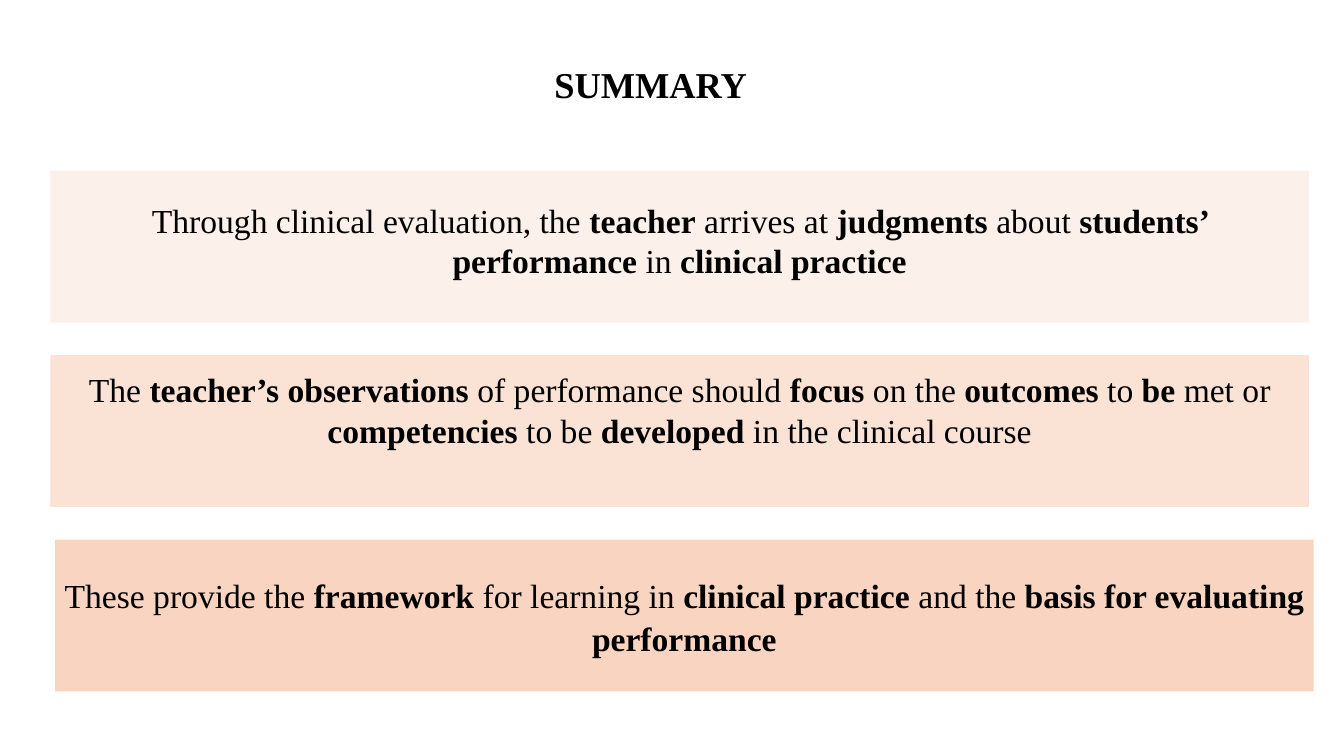
from pptx import Presentation
from pptx.dml.color import RGBColor as RGB
from pptx.enum.shapes import MSO_SHAPE as Shape
from pptx.enum.text import MSO_ANCHOR as Anchor, MSO_AUTO_SIZE as Auto, PP_ALIGN as Align
from pptx.oxml.ns import qn
from pptx.util import Inches, Pt
from lxml import etree

FONT = "Times New Roman"
COLORS = {"text": "000000", "light": "FBE3D6", "mid": "F6C6AD", "deep": "F2AA84"}
TITLE = "SUMMARY"

# Asterisks switch bold on and off.
BANDS = [
    dict(fill="light", left=0.75, foot=0.25, line=1, after=0,
         text="Through clinical evaluation, the *teacher* arrives at *judgments* about "
              "*students’ performance *in *clinical practice*"),
    dict(fill="mid", left=0.75, foot=0.69, line=1, after=0,
         text="The *teacher’s observations *of performance should *focus* on the *outcomes* to "
              "*be *met or *competencies* to be *developed* in the clinical course"),
    dict(fill="deep", left=0.82, foot=0.05, line=1.07, after=8,
         text="These provide the *framework* for learning in *clinical practice *and the "
              "*basis for evaluating performance*"),
]
TOP, STEP, WIDTH, HEIGHT = 2.54, 2.745, 18.73, 2.26


def color(name):
    return RGB.from_string(COLORS[name])


def write(para, text, size):
    para.font.name = FONT
    para.font.size = Pt(size)
    para.font.color.rgb = color("text")
    for i, part in enumerate(text.split("*")):
        if part:
            run = para.add_run()
            run.text = part
            run.font.bold = i % 2 == 1


def add_title(slide):
    box = slide.shapes.add_textbox(Inches(8.15), Inches(0.88), Inches(3.1), Inches(0.76))
    frame = box.text_frame
    frame.word_wrap = False
    frame.auto_size = Auto.SHAPE_TO_FIT_TEXT
    write(frame.paragraphs[0], f"*{TITLE}*", 39)


def add_band(slide, row, band):
    box = slide.shapes.add_shape(
        Shape.RECTANGLE, Inches(band["left"]), Inches(TOP + row * STEP),
        Inches(WIDTH), Inches(HEIGHT))
    box.shadow.inherit = False
    box.line.fill.background()
    box.fill.solid()
    box.fill.fore_color.rgb = color(band["fill"])
    tint = box.fill._xPr.find(qn("a:solidFill"))[0]
    etree.SubElement(tint, qn("a:alpha"), val="50000")
    frame = box.text_frame
    frame.word_wrap = True
    frame.vertical_anchor = Anchor.MIDDLE
    frame.margin_bottom = Inches(band["foot"])
    para = frame.paragraphs[0]
    para.alignment = Align.CENTER
    para.line_spacing = float(band["line"])
    para.space_after = Pt(band["after"])
    write(para, band["text"], 36)


def main():
    deck = Presentation()
    deck.slide_width, deck.slide_height = Inches(20), Inches(11.25)
    slide = deck.slides.add_slide(deck.slide_layouts[6])
    add_title(slide)
    for row, band in enumerate(BANDS):
        add_band(slide, row, band)
    deck.save("out.pptx")


if __name__ == "__main__":
    main()
